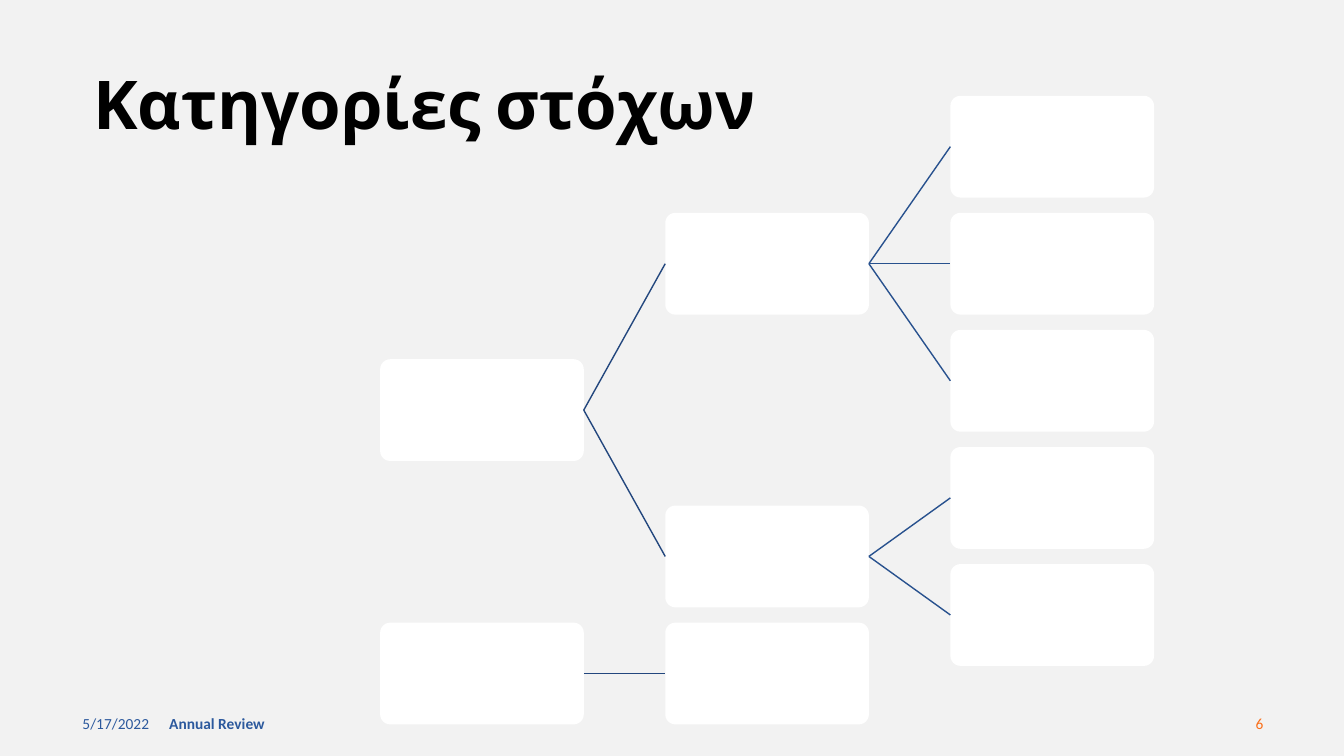
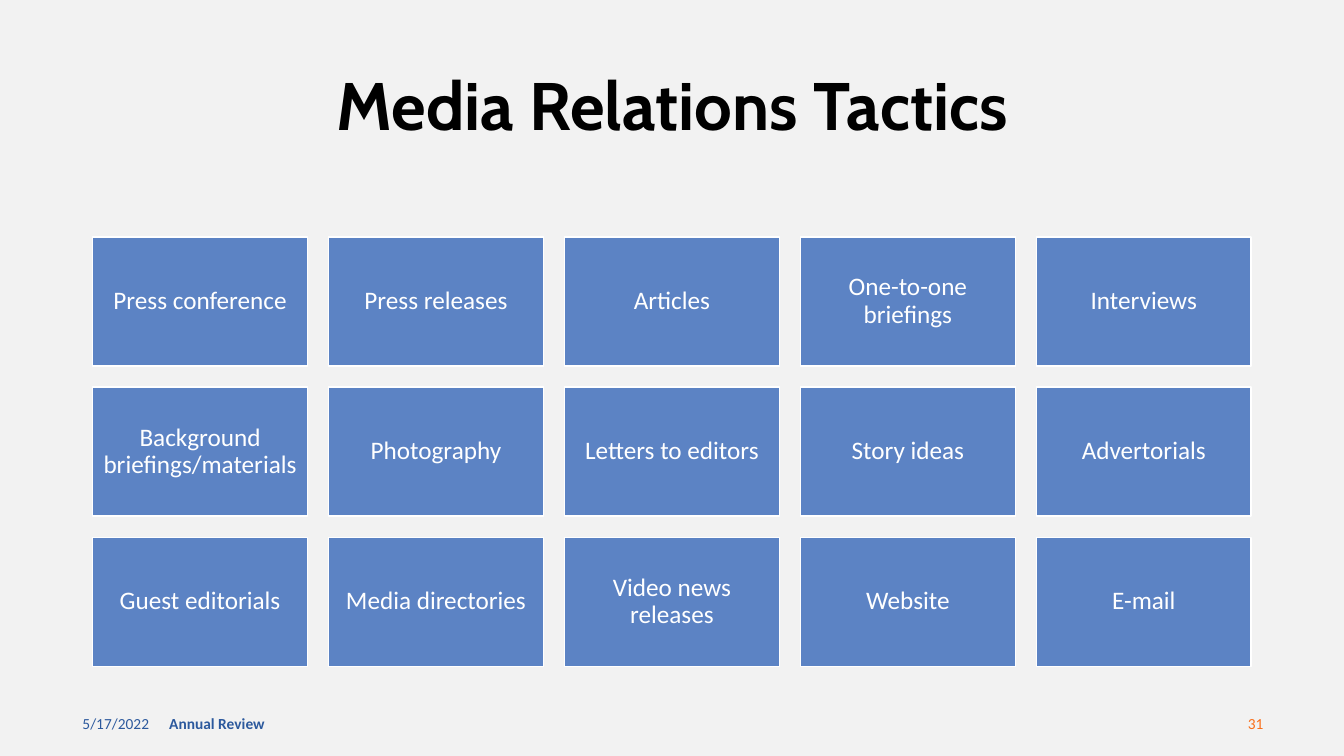
from lxml import etree
from pptx import Presentation
from pptx.dml.color import RGBColor
from pptx.enum import shapes, text
from pptx.oxml import ns
from pptx.util import Inches, Pt

PAPER = RGBColor(0xF2, 0xF2, 0xF2)
WHITE = RGBColor(0xFF, 0xFF, 0xFF)
BLACK = RGBColor(0x00, 0x00, 0x00)
BLUE = RGBColor(0x2C, 0x59, 0x9D)
ORANGE = RGBColor(0xFA, 0x6F, 0x1A)
TILE_BLUE = RGBColor(0x5C, 0x83, 0xC4)
BRANCH_COLOURS = [RGBColor(0x23, 0x47, 0x7E), RGBColor(0x28, 0x51, 0x8E)]


def set_text(frame, words, font_name, size, colour, align, bold=False):
    frame.word_wrap = True
    frame.auto_size = text.MSO_AUTO_SIZE.NONE
    frame.vertical_anchor = text.MSO_ANCHOR.MIDDLE
    para = frame.paragraphs[0]
    para.text = words
    para.alignment = align
    para.font.name = font_name
    para.font.size = Pt(size)
    para.font.bold = bold
    para.font.color.rgb = colour
    return para


def add_page(title_words, title_left, title_top, number):
    """Add a slide with its title and the shared footer."""
    page = deck.slides.add_slide(deck.slide_layouts[5])
    footers = [
        (0.72, 3, "5/17/2022", BLUE, text.PP_ALIGN.LEFT, False),
        (1.58, 4.5, "Annual Review", BLUE, text.PP_ALIGN.LEFT, True),
        (9.63, 3, number, ORANGE, text.PP_ALIGN.RIGHT, False),
    ]
    for left, width, words, colour, align, bold in footers:
        box = page.shapes.add_textbox(Inches(left), Inches(6.98), Inches(width), Inches(0.4))
        set_text(box.text_frame, words, "Calibri", 11, colour, align, bold)

    title = page.shapes.title
    title.left, title.top = Inches(title_left), Inches(title_top)
    title.width, title.height = Inches(11.5), Inches(0.77)
    para = set_text(title.text_frame, title_words, "Cabin", 48, BLACK,
                    text.PP_ALIGN.CENTER, True)
    para.line_spacing = 0.9
    return page


deck = Presentation()
deck.slide_width, deck.slide_height = Inches(13.33), Inches(7.5)
deck.slide_master.background.fill.solid()
deck.slide_master.background.fill.fore_color.rgb = PAPER

# Goal categories: a tree of blank boxes growing to the right
page = add_page("Κατηγορίες στόχων", -1.54, 0.68, "6")
NODE_WIDTH, NODE_HEIGHT = 2.02, 1.01
COLUMN_STEP, ROW_STEP = 1.4 * NODE_WIDTH, 1.15 * NODE_HEIGHT
LEVEL_ROWS = [[2.25, 4.5], [1, 3.5, 4.5], [0, 1, 2, 3, 4]]
# For each level, the parent of every node in the next level
PARENTS = [[0, 0, 1], [0, 0, 0, 1, 1]]

levels = []
for level, rows in enumerate(LEVEL_ROWS):
    nodes = []
    for row in rows:
        node = page.shapes.add_shape(
            shapes.MSO_SHAPE.ROUNDED_RECTANGLE,
            Inches(3.77 + level * COLUMN_STEP), Inches(0.95 + row * ROW_STEP),
            Inches(NODE_WIDTH), Inches(NODE_HEIGHT))
        node.adjustments[0] = 0.1
        node.shadow.inherit = False
        node.fill.solid()
        node.fill.fore_color.rgb = WHITE
        node.line.fill.background()
        nodes.append(node)
    levels.append(nodes)

for level, parents in enumerate(PARENTS):
    for child, parent in zip(levels[level + 1], parents):
        branch = page.shapes.add_connector(shapes.MSO_CONNECTOR.STRAIGHT, 0, 0, 0, 0)
        branch.begin_connect(levels[level][parent], 3)
        branch.end_connect(child, 1)
        branch.line.color.rgb = BRANCH_COLOURS[level]
        branch.line.width = Pt(1)
        etree.SubElement(branch._element.spPr, ns.qn("a:effectLst"))

# Media tactics: a grid of tiles
page = add_page("Media Relations Tactics", 0.92, 0.69, "31")
TACTICS = [
    ["Press conference", "Press releases", "Articles", "One-to-one briefings", "Interviews"],
    ["Background briefings/materials", "Photography", "Letters to editors", "Story ideas",
     "Advertorials"],
    ["Guest editorials", "Media directories", "Video news releases", "Website", "E-mail"],
]
for row, tactics in enumerate(TACTICS):
    for column, tactic in enumerate(tactics):
        tile = page.shapes.add_shape(
            shapes.MSO_SHAPE.RECTANGLE,
            Inches(0.92 + column * 2.34), Inches(2.35 + row * 1.49),
            Inches(2.13), Inches(1.28))
        tile.shadow.inherit = False
        tile.fill.solid()
        tile.fill.fore_color.rgb = TILE_BLUE
        tile.line.color.rgb = WHITE
        tile.line.width = Pt(1)
        frame = tile.text_frame
        frame.margin_left = frame.margin_right = Inches(0.07)
        frame.margin_top = frame.margin_bottom = Inches(0.07)
        para = set_text(frame, tactic, "Calibri", 18, WHITE, text.PP_ALIGN.CENTER)
        para.line_spacing = 0.9

deck.save("out.pptx")
